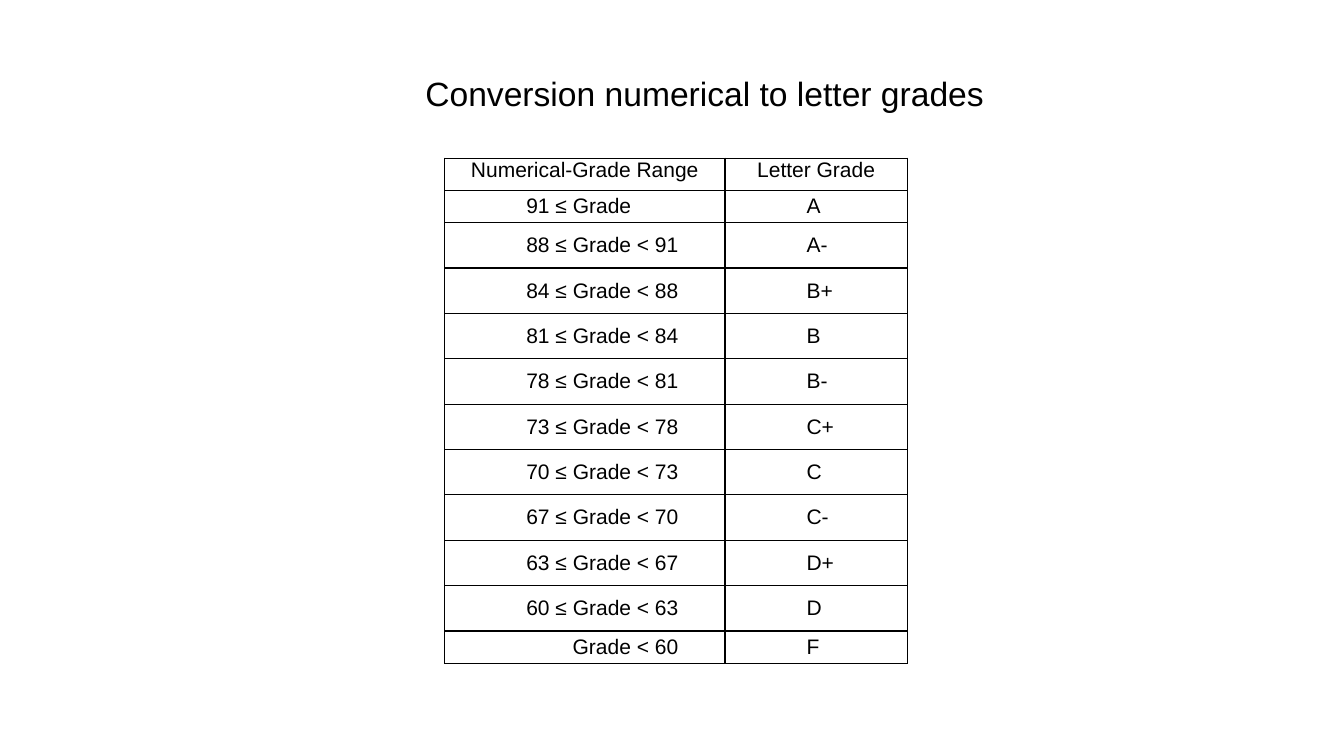
import pptx
import pptx.dml.color
import pptx.enum.text
import pptx.oxml
import pptx.oxml.ns
import pptx.util
from pptx.util import Inches

FONT = "Arial"
BLACK = "000000"
GRADES = [
    ("Numerical-Grade Range", "Letter Grade"),
    ("91 ≤ Grade", "A"),
    ("88 ≤ Grade < 91", "A-"),
    ("84 ≤ Grade < 88", "B+"),
    ("81 ≤ Grade < 84", "B"),
    ("78 ≤ Grade < 81", "B-"),
    ("73 ≤ Grade < 78", "C+"),
    ("70 ≤ Grade < 73", "C"),
    ("67 ≤ Grade < 70", "C-"),
    ("63 ≤ Grade < 67", "D+"),
    ("60 ≤ Grade < 63", "D"),
    ("Grade < 60", "F"),
]
COLUMN_WIDTHS = [2.78, 1.81]
SHORT_ROWS = {0, 1, len(GRADES) - 1}
ROW_HEIGHTS = [0.32 if row in SHORT_ROWS else 0.45 for row in range(len(GRADES))]


def set_font(para, size, color):
    para.font.name = FONT
    para.font.size = pptx.util.Pt(size)
    para.font.color.rgb = pptx.dml.color.RGBColor.from_string(color)


def add_borders(cell, color, width):
    """Outline a cell; line elements must precede its fill element."""
    properties = cell._tc.get_or_add_tcPr()
    for position, side in enumerate(("lnL", "lnR", "lnT", "lnB")):
        line = pptx.oxml.parse_xml(
            f'<a:{side} {pptx.oxml.ns.nsdecls("a")} w="{pptx.util.Pt(width)}">'
            f'<a:solidFill><a:srgbClr val="{color}"/></a:solidFill></a:{side}>'
        )
        properties.insert(position, line)


deck = pptx.Presentation()
deck.slide_width = Inches(13.33)
deck.slide_height = Inches(7.5)
page = deck.slides.add_slide(deck.slide_layouts[6])

# Grade table
table = page.shapes.add_table(
    len(GRADES), len(COLUMN_WIDTHS), Inches(4.41), Inches(1.57),
    Inches(sum(COLUMN_WIDTHS)), Inches(sum(ROW_HEIGHTS)),
).table
table.first_row = False
table.horz_banding = False
for column, width in zip(table.columns, COLUMN_WIDTHS):
    column.width = Inches(width)

for row, (height, texts) in enumerate(zip(ROW_HEIGHTS, GRADES)):
    table.rows[row].height = Inches(height)
    for column, text in enumerate(texts):
        cell = table.cell(row, column)
        cell.text = text
        cell.fill.background()
        add_borders(cell, BLACK, 1)
        cell.margin_top = cell.margin_bottom = 0
        cell.margin_left = cell.margin_right = Inches(0.06)
        para = cell.text_frame.paragraphs[0]
        set_font(para, 15, BLACK)
        if row == 0:
            para.alignment = pptx.enum.text.PP_ALIGN.CENTER
        else:
            cell.vertical_anchor = pptx.enum.text.MSO_ANCHOR.MIDDLE
            # A range without a lower bound lines up under the word "Grade"
            cell.margin_left = Inches(1.27 if text.startswith("Grade") else 0.81)

# Title
title = page.shapes.add_textbox(Inches(4.12), Inches(0.67), Inches(5.8), Inches(0.5))
title.text_frame.word_wrap = False
title.text_frame.auto_size = pptx.enum.text.MSO_AUTO_SIZE.SHAPE_TO_FIT_TEXT
title.text_frame.text = "Conversion numerical to letter grades"
set_font(title.text_frame.paragraphs[0], 24, BLACK)

deck.save("out.pptx")
